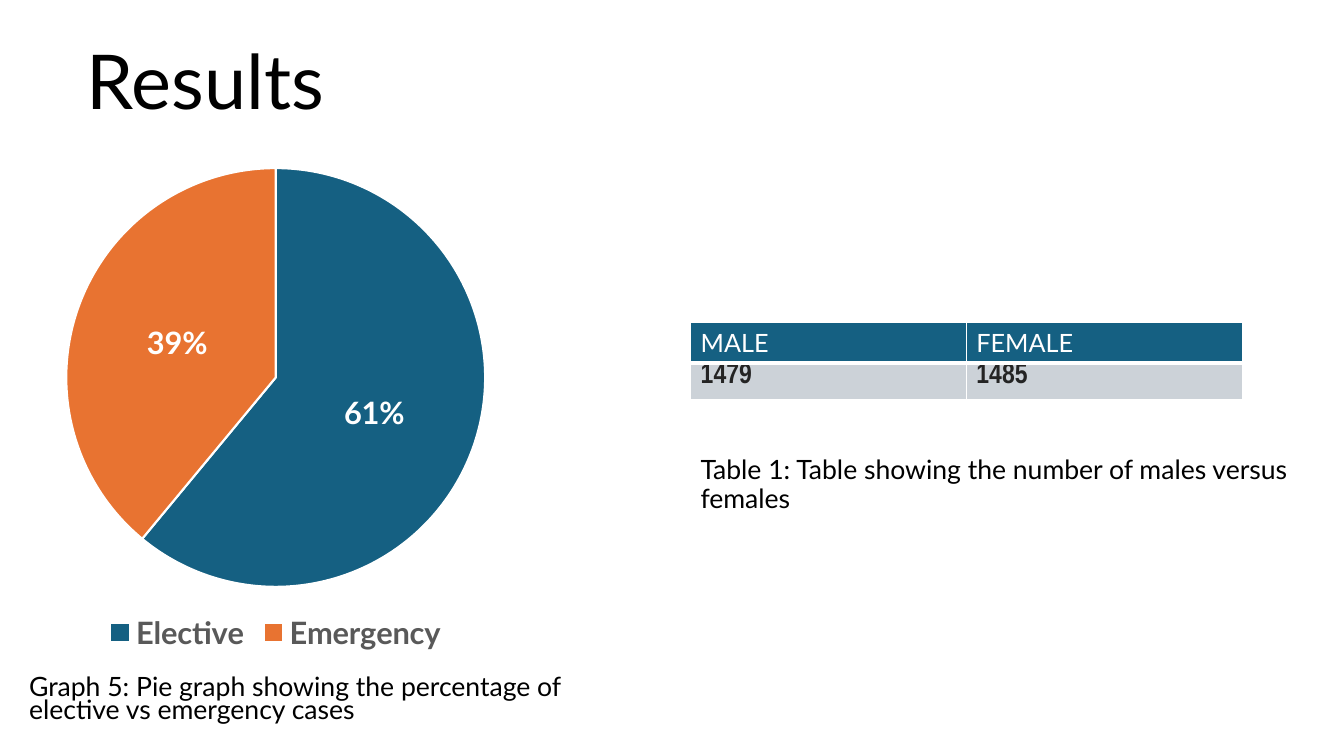
from dataclasses import dataclass

import pptx
import pptx.chart.data
import pptx.dml.color
import pptx.enum.chart
import pptx.enum.text
import pptx.oxml
import pptx.oxml.ns
import pptx.util
from pptx.util import Inches

BLUE, ORANGE, GRAY, WHITE, BLACK = "156082", "E87331", "CCD2D8", "FFFFFF", "000000"


@dataclass
class Caption:
    text: str
    box: tuple[float, float, float, float]
    size: int
    spacing: float


@dataclass
class RowStyle:
    values: tuple[str, str]
    height: float
    margin: float
    fill: str
    font: dict
    bottom: int


CAPTIONS = [
    Caption("Results", (0.76, 0, 10.1, 1.3), 54, 0.9),
    Caption("Graph 5: Pie graph showing the percentage of elective vs emergency cases",
            (0.19, 6.67, 5.98, 0.56), 19, 0.7),
    Caption("Table 1: Table showing the number of males versus females",
            (6.85, 4.64, 6.1, 0.51), 19, 0.9),
]
ROWS = [
    RowStyle(("MALE", "FEMALE"), 0.4, 0.05, BLUE,
             {"name": "Lato", "size": 18, "color": WHITE, "bold": False}, 3),
    RowStyle(("1479", "1485"), 0.36, 0, GRAY,
             {"name": "Arial Narrow", "size": 20, "color": "242424", "bold": True}, 1),
]


def rgb(value: str) -> pptx.dml.color.RGBColor:
    return pptx.dml.color.RGBColor.from_string(value)


def set_font(font, values: dict) -> None:
    for key, value in values.items():
        if key == "color":
            font.color.rgb = rgb(value)
        else:
            setattr(font, key, pptx.util.Pt(value) if key == "size" else value)


def add_caption(s, caption: Caption) -> None:
    sp = s.shapes.add_textbox(*map(Inches, caption.box))
    tf = sp.text_frame
    tf.word_wrap = True
    tf.vertical_anchor = pptx.enum.text.MSO_ANCHOR.BOTTOM
    p = tf.paragraphs[0]
    p.line_spacing = caption.spacing
    r = p.add_run()
    r.text = caption.text
    set_font(r.font, {"name": "Lato", "size": caption.size, "color": BLACK})


def add_pie(s) -> None:
    data = pptx.chart.data.CategoryChartData()
    data.categories = ["Elective", "Emergency"]
    data.add_series("Series 1", (61, 39))
    chart = s.shapes.add_chart(pptx.enum.chart.XL_CHART_TYPE.PIE, Inches(-1.39), Inches(1.53),
                               Inches(8.25), Inches(4.99), data).chart
    set_font(chart.font, {"name": "Lato", "size": 10, "color": BLACK})
    chart.has_title = False
    chart.has_legend = True
    chart.legend.position = pptx.enum.chart.XL_LEGEND_POSITION.BOTTOM
    chart.legend.include_in_layout = False
    bold = {"name": "Lato", "size": 22, "bold": True}
    set_font(chart.legend.font, bold | {"color": "595959"})
    plot = chart.plots[0]
    plot.vary_by_categories = True
    for i, color in enumerate((BLUE, ORANGE)):
        fmt = plot.series[0].points[i].format
        fmt.fill.solid()
        fmt.fill.fore_color.rgb = rgb(color)
        fmt.line.color.rgb = rgb(WHITE)
        fmt.line.width = pptx.util.Pt(1.5)
    labels = plot.series[0].data_labels
    labels.show_value = False
    labels.show_percentage = True
    labels.number_format = "0%"
    labels.number_format_is_linked = False
    labels.position = pptx.enum.chart.XL_LABEL_POSITION.CENTER
    set_font(labels.font, bold | {"color": WHITE})


def set_borders(cell, bottom: int) -> None:
    tc_pr = cell._tc.get_or_add_tcPr()
    for i, (side, width) in enumerate({"L": 1, "R": 1, "T": 1, "B": bottom}.items()):
        tc_pr.insert(i, pptx.oxml.parse_xml(
            f'<a:ln{side} {pptx.oxml.ns.nsdecls("a")} w="{pptx.util.Pt(width)}"><a:solidFill>'
            f'<a:srgbClr val="{WHITE}"/></a:solidFill></a:ln{side}>'))


def add_counts(s) -> None:
    table = s.shapes.add_table(len(ROWS), 2, Inches(6.85), Inches(3.2), Inches(5.47),
                               Inches(sum(row.height for row in ROWS))).table
    for i, row in enumerate(ROWS):
        table.rows[i].height = Inches(row.height)
        for j, value in enumerate(row.values):
            cell = table.cell(i, j)
            cell.margin_top = cell.margin_bottom = Inches(row.margin)
            cell.fill.solid()
            cell.fill.fore_color.rgb = rgb(row.fill)
            r = cell.text_frame.paragraphs[0].add_run()
            r.text = value
            set_font(r.font, row.font)
            set_borders(cell, row.bottom)


def main() -> None:
    prs = pptx.Presentation()
    prs.slide_width, prs.slide_height = Inches(13.33), Inches(7.5)
    s = prs.slides.add_slide(prs.slide_layouts[6])
    for caption in CAPTIONS:
        add_caption(s, caption)
    add_pie(s)
    add_counts(s)
    prs.save("out.pptx")


if __name__ == "__main__":
    main()
